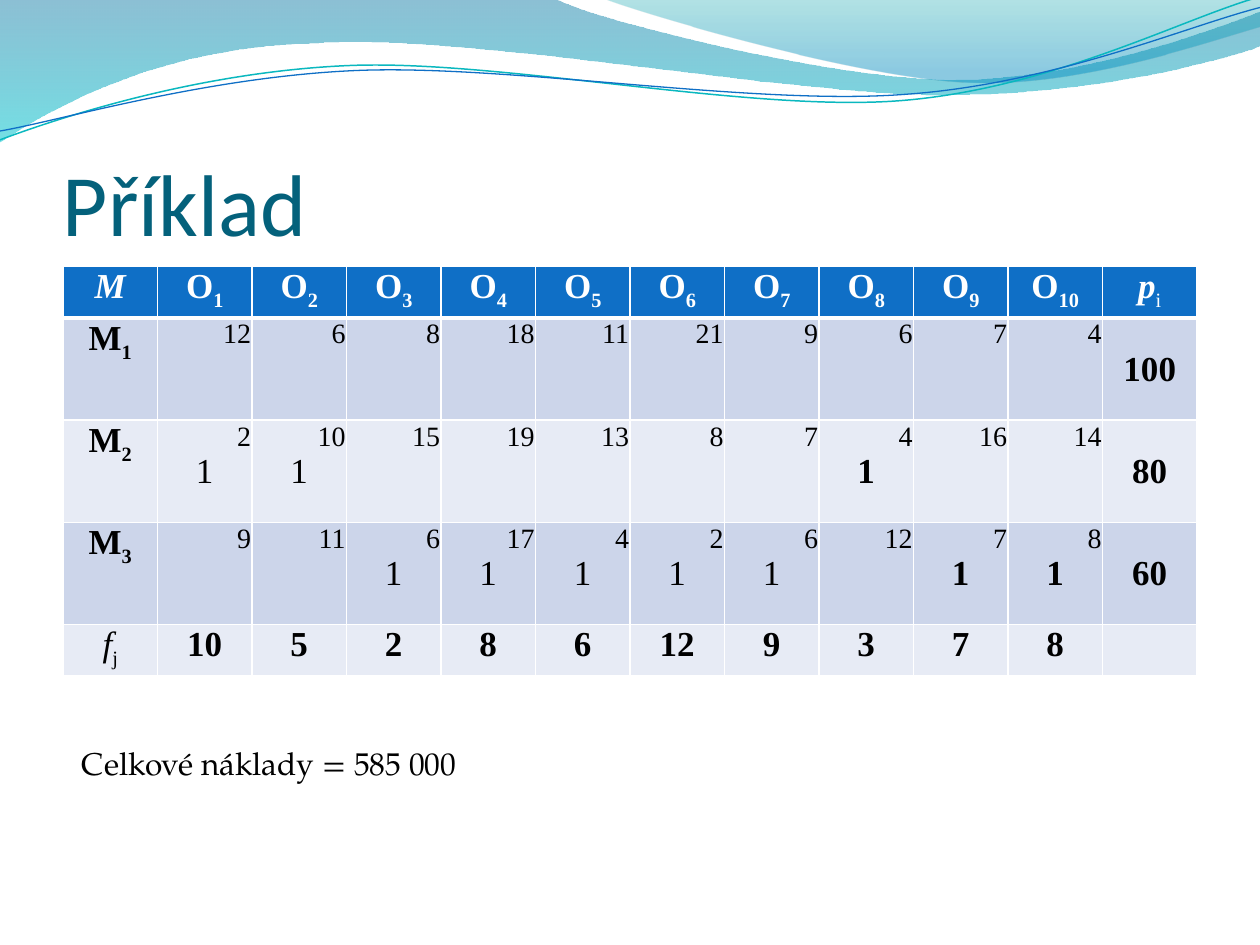
from math import cos, radians, sin
from lxml.etree import SubElement
from pptx import Presentation
from pptx.dml.color import RGBColor
from pptx.enum.text import MSO_ANCHOR, PP_ALIGN
from pptx.oxml import parse_xml
from pptx.oxml.ns import nsdecls, qn
from pptx.util import Cm, Pt

WHITE, BLACK, BLUE = "FFFFFF", "000000", "0F6FC6"
BANDS = ("CCD5EA", "E7EBF5")
SERIF = "Times New Roman"

COSTS = [
    [12, 6, 8, 18, 11, 21, 9, 6, 7, 4],
    [2, 10, 15, 19, 13, 8, 7, 4, 16, 14],
    [9, 11, 6, 17, 4, 2, 6, 12, 7, 8],
]
SUPPLY = [100, 80, 60]
NEEDS = [10, 5, 2, 8, 6, 12, 9, 3, 7, 8]
PICKS = [2, 2, 3, 3, 3, 3, 3, 2, 3, 3]  # machine chosen for each order
HEAVY = 8  # from this order on, the chosen mark is bold

# Wave outlines in tenths of the slide width: a pair is a corner, six numbers a curve
BAND = [(0, 0), (4.4, -0.01), (4.76, 0.17, 6.64, 0.63, 7.58, 0.63),
        (8.53, 0.63, 9.58, 0.26, 10, 0.09), (10.01, 0.36),
        (9.83, 0.44, 8.7, 0.76, 7.46, 0.75), (6.22, 0.75, 3.82, 0.28, 2.57, 0.34),
        (1.29, 0.36, 0.46, 0.83, -0.01, 1.13), (0, 0)]
CREST = [(4.79, -0.01), (5.09, 0.11, 6.82, 0.62, 7.69, 0.65),
         (8.56, 0.69, 9.61, 0.32, 10, 0.21), (10, 0), (4.79, -0.01)]
TEAL = [(0, 1.11), (0.48, 0.93, 1.58, 0.57, 2.77, 0.52),
        (3.95, 0.47, 5.93, 0.89, 7.13, 0.8), (8.33, 0.71, 9.38, 0.15, 9.98, -0.02)]
NAVY = [(0, 1.04), (0.47, 0.96, 1.64, 0.61, 2.83, 0.56),
        (4.03, 0.51, 5.97, 0.84, 7.17, 0.75), (8.36, 0.67, 9.41, 0.21, 10, 0.06)]
TILT = 2.7  # degrees by which the thin lines lean to the left


def color(code):
    return RGBColor.from_string(code)


def put(item, **values):
    for name, value in values.items():
        setattr(item, name, value)


def write(para, text, code, base=0, **style):
    run = para.add_run()
    run.text = str(text)
    put(run.font, **style)
    run.font.color.rgb = color(code)
    if base:
        run.font._element.set("baseline", str(base * 1000))


def turn(point, pivot, angle):
    x, y = point[0] - pivot[0], point[1] - pivot[1]
    c, s = cos(radians(angle)), sin(radians(angle))
    return pivot[0] + x * c - y * s, pivot[1] + x * s + y * c


def outline(slide, box, parts, close, pivot=None):
    """Draw corners and curves; with a pivot, as a shape leaning by TILT."""
    left, top, width = box[:3]
    unit = width / 10
    points = [part[i:i + 2] for part in parts for i in range(0, len(part), 2)]
    if pivot:
        points = [turn(point, pivot, TILT) for point in points]
    points = [(round(left + x * unit), round(top + y * unit)) for x, y in points]
    maker = slide.shapes.build_freeform(*points[0])
    maker.add_line_segments(points[1:], close=close)
    shape = maker.convert_to_shape()
    shape.shadow.inherit = False
    if pivot:
        shape.rotation = 360 - TILT
    # Join each three segments of a curve into one cubic
    legs = iter(list(shape._element.iter(qn("a:lnTo"))))
    for part in parts[1:]:
        leg = next(legs)
        if len(part) == 6:
            leg.tag = qn("a:cubicBezTo")
            for _ in range(2):
                extra = next(legs)
                leg.append(extra[0])
                extra.getparent().remove(extra)
    return shape


def waves(slide, box):
    # Translucent gradient bands
    for parts, stops in (
        (BAND, ((0, "0074A1", 45), (1, "00C6CF", 55))),
        (CREST, ((0, "00A1A9", 30), (0.8, "008BBF", 45))),
    ):
        shape = outline(slide, box, parts, True)
        shape.line.fill.background()
        shape.fill.gradient()
        shape.fill.gradient_angle = 270
        for stop, (place, code, _) in zip(shape.fill.gradient_stops, stops):
            stop.position = place
            stop.color.rgb = color(code)
        for node, (_, _, alpha) in zip(shape._element.spPr.iter(qn("a:srgbClr")), stops):
            SubElement(node, qn("a:alpha")).set("val", str(alpha * 1000))
    # Thin lines
    for parts, code, width, pivot in (
        (TEAL, "0AB8BF", 0.85, (4.99, 0.58)),
        (NAVY, BLUE, 0.75, (5, 0.59)),
    ):
        shape = outline(slide, box, parts, False, pivot)
        shape.fill.background()
        shape.line.color.rgb = color(code)
        shape.line.width = Pt(width)


def label(slide, box, text, code, frame, **style):
    area = slide.shapes.add_textbox(*box).text_frame
    put(area, word_wrap=True, **frame)
    write(area.paragraphs[0], text, code, **style)


def dress(cell, fill, top=1, bottom=1):
    """Set the margins, borders and fill of a cell."""
    put(cell, margin_left=Cm(0.02), margin_right=Cm(0.02), margin_top=Cm(0.02),
        margin_bottom=0)
    props = cell._tc.get_or_add_tcPr()
    for side, width in (("L", 1), ("R", 1), ("T", top), ("B", bottom)):
        props.append(parse_xml(
            f'<a:ln{side} {nsdecls("a")} w="{Pt(width)}"><a:solidFill>'
            f'<a:srgbClr val="{WHITE}"/></a:solidFill></a:ln{side}>'))
    cell.fill.solid()
    cell.fill.fore_color.rgb = color(fill)


def line(cell, *runs, code=BLACK, align=PP_ALIGN.CENTER, **style):
    """Add a line to a cell; each run is its text and what differs in it."""
    frame = cell.text_frame
    para = frame.paragraphs[0] if not frame.text else frame.add_paragraph()
    para.alignment = align
    for text, extra in runs:
        look = dict(name=SERIF, size=Pt(20), bold=True, italic=False)
        write(para, text, code, **{**look, **style, **extra})


def grid(slide, box):
    rows, cols = len(COSTS) + 2, len(NEEDS) + 2
    table = slide.shapes.add_table(rows, cols, *box).table
    put(table, first_row=False, horz_banding=False)
    for col in table.columns:
        col.width = round(box[2] / cols)
    for row, tall in zip(table.rows, [1.04] + [2.06] * len(COSTS) + [1.04]):
        row.height = Cm(tall)
    for r in range(rows):
        for c in range(cols):
            dress(table.cell(r, c), BANDS[(r - 1) % 2] if r else BLUE,
                  top=3 if r == 1 else 1, bottom=1 if r else 3)

    sub, slant = {"base": -25}, {"italic": True}
    last = cols - 1
    # Header and needs rows
    line(table.cell(0, 0), ("M", slant), code=WHITE)
    line(table.cell(0, last), ("p", slant), ("i", {**sub, "bold": False}), code=WHITE)
    line(table.cell(rows - 1, 0), ("f", slant), ("j", sub), bold=False)
    for c, need in enumerate(NEEDS, 1):
        line(table.cell(0, c), ("O", {}), (c, sub), code=WHITE)
        line(table.cell(rows - 1, c), (need, {}))
    # Machine rows
    for r, (costs, limit) in enumerate(zip(COSTS, SUPPLY), 1):
        line(table.cell(r, 0), ("M", {}), (r, sub))
        for c, (cost, pick) in enumerate(zip(costs, PICKS), 1):
            cell = table.cell(r, c)
            line(cell, (cost, {}), align=PP_ALIGN.RIGHT, size=Pt(16), bold=False)
            if pick == r:
                line(cell, (1, {}), bold=c >= HEAVY)
        line(table.cell(r, last), (limit, {}))
        table.cell(r, last).vertical_anchor = MSO_ANCHOR.MIDDLE


def main():
    deck = Presentation()
    put(deck, slide_width=Cm(25.4), slide_height=Cm(19.05))
    slide = deck.slides.add_slide(deck.slide_layouts[6])
    waves(slide, (0, 0, Cm(25.4), Cm(2.87)))
    label(slide, (Cm(1.27), Cm(1.95), Cm(22.86), Cm(3.18)), "Příklad", "04617B",
          dict(vertical_anchor=MSO_ANCHOR.BOTTOM, margin_left=0, margin_right=0,
               margin_bottom=0), name="Calibri", size=Pt(50))
    grid(slide, (Cm(1.27), Cm(5.37), Cm(22.86), Cm(8.26)))
    label(slide, (Cm(1.4), Cm(14.88), Cm(13.49), Cm(1.02)), "Celkové náklady = 585 000",
          BLACK, {}, name="TeX Gyre Pagella", size=Pt(18))
    deck.save("out.pptx")


if __name__ == "__main__":
    main()
